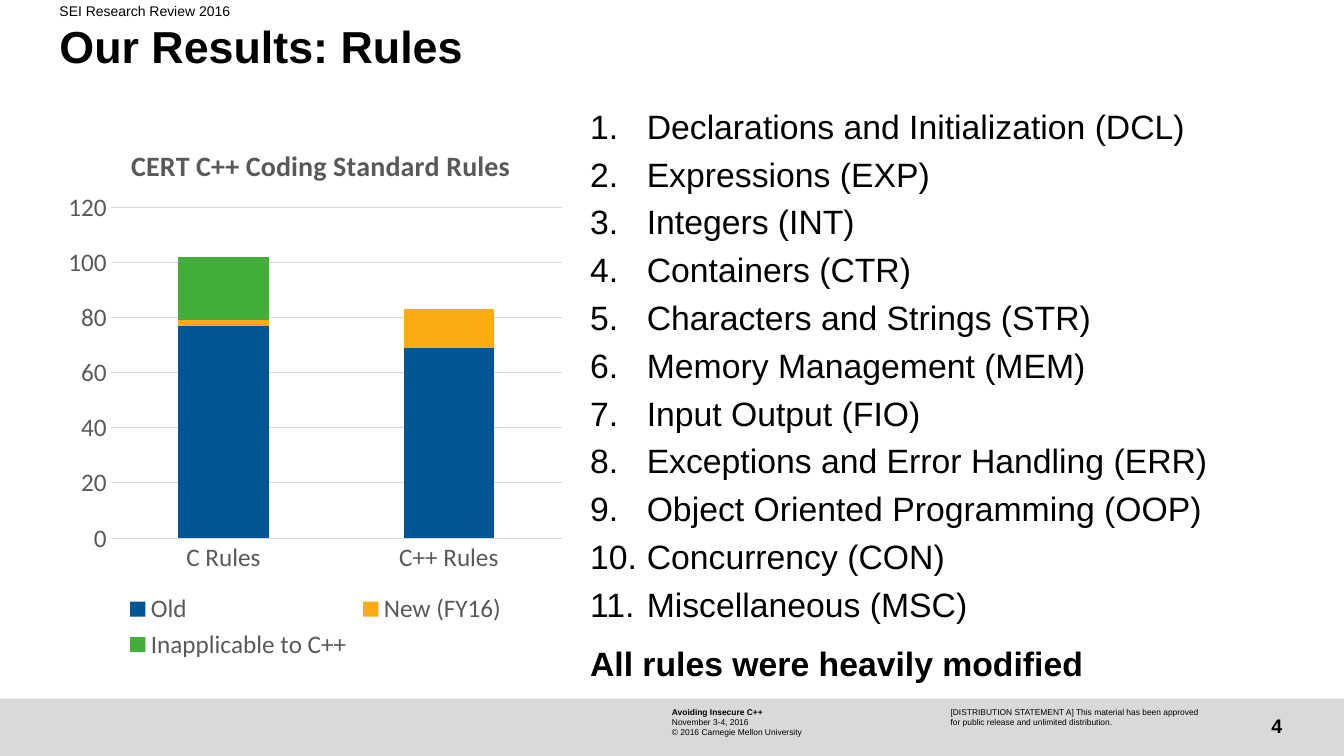
from dataclasses import dataclass

from lxml.etree import SubElement
from pptx import Presentation
from pptx.chart.data import CategoryChartData
from pptx.dml.color import RGBColor
from pptx.enum.chart import XL_CHART_TYPE, XL_LEGEND_POSITION, XL_TICK_MARK
from pptx.enum.shapes import MSO_SHAPE
from pptx.enum.text import MSO_ANCHOR, PP_ALIGN
from pptx.oxml import parse_xml
from pptx.oxml.ns import nsdecls, qn
from pptx.util import Pt


@dataclass(frozen=True)
class Theme:
    body_font: str = "Arial"
    chart_font: str = "Calibri"
    ink: str = "000000"
    chart_ink: str = "595959"
    band: str = "D9D9D9"
    series: tuple = ("005694", "FCAC12", "43AE38")
    title: float = 32
    body: float = 24.1
    chart_title: float = 20
    chart_text: float = 18
    page: float = 14
    header: float = 10
    footer: float = 6


def color(value):
    return RGBColor.from_string(value)


def set_font(font, name, size, ink, bold=False):
    font.name = name
    font.size = Pt(size)
    font.bold = bold
    font.color.rgb = color(ink)


def write(paragraph, text, *, font, size, ink, bold=False, align=PP_ALIGN.LEFT,
          line=1.0, before=0, number_indent=0):
    paragraph.alignment = align
    paragraph.line_spacing = line
    paragraph.space_before = Pt(before)
    if number_indent:
        properties = paragraph._p.get_or_add_pPr()
        properties.set("marL", str(Pt(number_indent)))
        properties.set("indent", str(-Pt(number_indent)))
        SubElement(properties, qn("a:buFont"), typeface="+mj-lt")
        SubElement(properties, qn("a:buAutoNum"), type="arabicPeriod")
    run = paragraph.add_run()
    run.text = text
    set_font(run.font, font, size, ink, bold)


def place(element, x, y, width=None, height=None):
    old = element.find(qn("c:layout"))
    if old is not None:
        element.remove(old)
    target = '<c:layoutTarget val="inner"/>' if width else ""
    extent = f'<c:w val="{width}"/><c:h val="{height}"/>' if width else ""
    layout = parse_xml(
        f'<c:layout {nsdecls("c")}><c:manualLayout>{target}'
        f'<c:xMode val="edge"/><c:yMode val="edge"/>'
        f'<c:x val="{x}"/><c:y val="{y}"/>{extent}'
        f'</c:manualLayout></c:layout>')
    text = element.find(qn("c:tx"))
    element.insert(0 if text is None else 1, layout)


class SlideBuilder:
    def __init__(self, slide, theme):
        self.slide = slide
        self.theme = theme

    def band(self, left, top, width, height):
        band = self.slide.shapes.add_shape(
            MSO_SHAPE.RECTANGLE, Pt(left), Pt(top), Pt(width), Pt(height))
        band.shadow.inherit = False
        band.fill.solid()
        band.fill.fore_color.rgb = color(self.theme.band)
        band.line.fill.background()

    def text(self, left, top, width, height, lines, size,
             anchor=MSO_ANCHOR.TOP, **common):
        frame = self.slide.shapes.add_textbox(
            Pt(left), Pt(top), Pt(width), Pt(height)).text_frame
        frame.word_wrap = True
        frame.vertical_anchor = anchor
        frame.margin_left = frame.margin_right = 0
        frame.margin_top = frame.margin_bottom = 0
        for index, (content, options) in enumerate(lines):
            paragraph = frame.add_paragraph() if index else frame.paragraphs[0]
            style = dict(font=self.theme.body_font, size=size, ink=self.theme.ink)
            write(paragraph, content, **{**style, **common, **options})

    def stacked_chart(self, left, top, width, height, title, categories, series):
        theme = self.theme
        data = CategoryChartData()
        data.categories = categories
        for name, values in series:
            data.add_series(name, values)
        chart = self.slide.shapes.add_chart(
            XL_CHART_TYPE.COLUMN_STACKED, Pt(left), Pt(top),
            Pt(width), Pt(height), data).chart
        set_font(chart.font, theme.chart_font, theme.chart_text, theme.chart_ink)

        chart.has_title = True
        write(chart.chart_title.text_frame.paragraphs[0], title,
              font=theme.chart_font, size=theme.chart_title,
              ink=theme.chart_ink, bold=True, align=PP_ALIGN.CENTER)
        place(chart.chart_title._element, 0.13, 0.05)

        plot = chart.plots[0]
        plot.gap_width = 150
        plot.overlap = 100
        plot.vary_by_categories = False
        for bars, fill in zip(plot.series, theme.series):
            bars.format.fill.solid()
            bars.format.fill.fore_color.rgb = color(fill)
        place(chart._chartSpace.chart.plotArea, 0.1, 0.17, 0.88, 0.6)

        for axis in (chart.category_axis, chart.value_axis):
            axis.major_tick_mark = axis.minor_tick_mark = XL_TICK_MARK.NONE
            set_font(axis.tick_labels.font, theme.chart_font,
                     theme.chart_text, theme.chart_ink)
        chart.value_axis.minimum_scale = 0
        chart.value_axis.maximum_scale = 120
        chart.value_axis.major_unit = 20
        chart.value_axis.format.line.fill.background()
        for line in (chart.category_axis.format.line,
                     chart.value_axis.major_gridlines.format.line):
            line.color.rgb = color(theme.band)
            line.width = Pt(0.75)

        chart.has_legend = True
        chart.legend.position = XL_LEGEND_POSITION.BOTTOM
        chart.legend.include_in_layout = False
        set_font(chart.legend.font, theme.chart_font,
                 theme.chart_text, theme.chart_ink)


RULES = (
    "Declarations and Initialization (DCL)",
    "Expressions (EXP)",
    "Integers (INT)",
    "Containers (CTR)",
    "Characters and Strings (STR)",
    "Memory Management (MEM)",
    "Input Output (FIO)",
    "Exceptions and Error Handling (ERR)",
    "Object Oriented Programming (OOP)",
    "Concurrency (CON)",
    "Miscellaneous (MSC)",
)


def main():
    deck = Presentation()
    deck.slide_width, deck.slide_height = Pt(960), Pt(540)
    theme = Theme()
    page = SlideBuilder(deck.slides.add_slide(deck.slide_layouts[6]), theme)

    page.band(0, 499, 960, 41)
    page.text(862, 504, 54, 29, [("4", {})], theme.page,
              anchor=MSO_ANCHOR.MIDDLE, bold=True, align=PP_ALIGN.RIGHT)
    page.text(480, 505, 192, 22, [
        ("Avoiding Insecure C++", {"bold": True}),
        ("November 3-4, 2016", {}),
        ("© 2016 Carnegie Mellon University", {}),
    ], theme.footer)
    page.text(679, 505, 179, 14, [
        ("[DISTRIBUTION STATEMENT A] This material has been approved "
         "for public release and unlimited distribution.", {}),
    ], theme.footer)

    page.text(42.5, 3, 430, 12, [("SEI Research Review 2016", {})],
              theme.header, line=0.9)
    page.text(42.5, 18, 798, 63, [("Our Results: Rules", {})],
              theme.title, bold=True, line=0.9)

    rules = [(rule, {"number_indent": 40.5, "before": 11 if index else 0})
             for index, rule in enumerate(RULES)]
    closing = ("All rules were heavily modified", {"bold": True, "before": 19})
    page.text(421.5, 81, 465, 394, rules + [closing], theme.body, line=0.8)

    page.stacked_chart(
        42.5, 81, 366, 394, "CERT C++ Coding Standard Rules",
        ("C Rules", "C++ Rules"),
        (("Old", (77, 69)), ("New (FY16)", (2, 14)),
         ("Inapplicable to C++", (23, 0))))

    deck.save("out.pptx")


if __name__ == "__main__":
    main()
